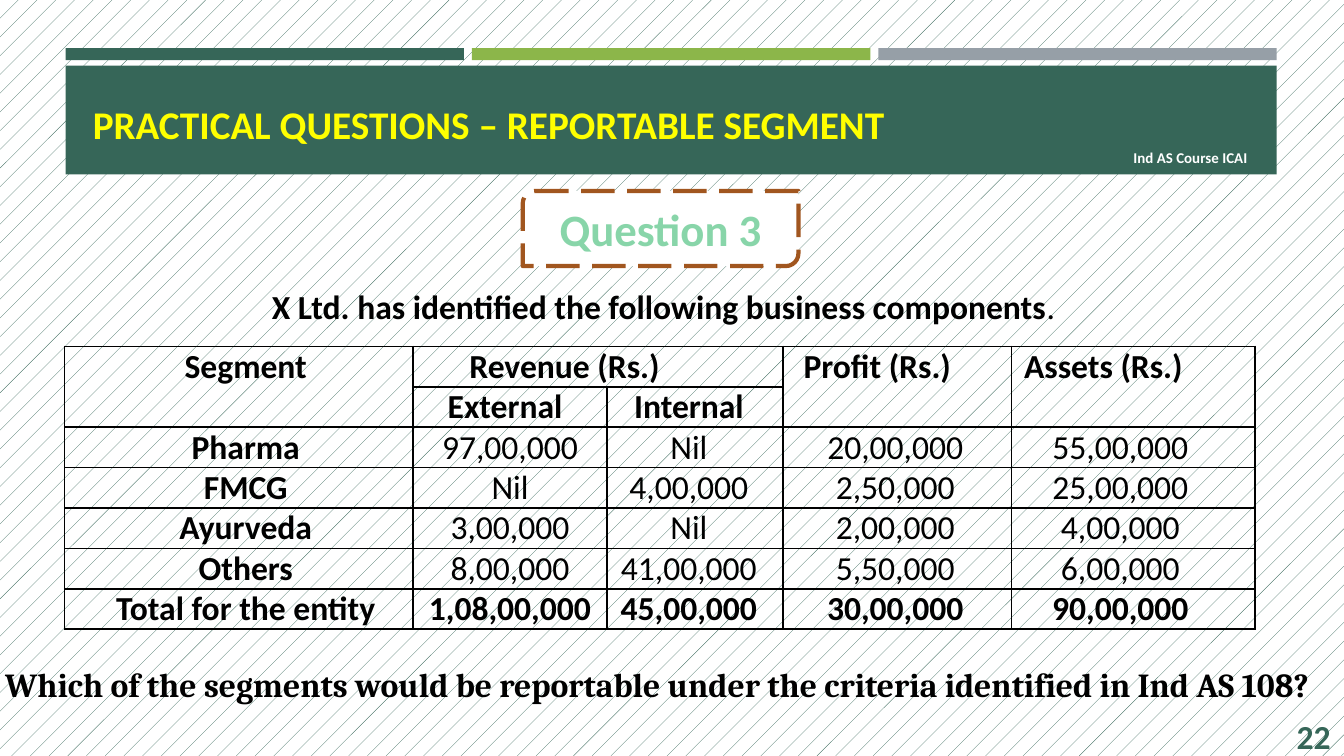
from lxml import etree
from pptx import Presentation
from pptx.dml.color import RGBColor
from pptx.enum.dml import MSO_LINE, MSO_PATTERN
from pptx.enum.shapes import MSO_SHAPE
from pptx.enum.text import MSO_ANCHOR, PP_ALIGN
from pptx.oxml.ns import qn
from pptx.util import Cm, Pt

RECTANGLE = MSO_SHAPE.RECTANGLE
ROUND_DIAGONAL = MSO_SHAPE.ROUND_2_DIAG_RECTANGLE
LONG_DASH = MSO_LINE.LONG_DASH
DOTS = MSO_PATTERN.PERCENT_5
LEFT, CENTER, RIGHT = PP_ALIGN.LEFT, PP_ALIGN.CENTER, PP_ALIGN.RIGHT
TOP, MIDDLE = MSO_ANCHOR.TOP, MSO_ANCHOR.MIDDLE

COLORS = {
    "green": "366658", "lime": "8CB64A", "gray": "969FA7", "white": "FFFFFF",
    "black": "000000", "yellow": "FFFF00", "mint": "88D5A9", "brown": "A1561F",
}

HEADINGS = [
    ["Segment", "Revenue (Rs.)", "", "Profit (Rs.)", "Assets (Rs.)"],
    ["", "External", "Internal", "", ""],
]
SEGMENTS = [
    ["Pharma", "97,00,000", "Nil", "20,00,000", "55,00,000"],
    ["FMCG", "Nil", "4,00,000", "2,50,000", "25,00,000"],
    ["Ayurveda", "3,00,000", "Nil", "2,00,000", "4,00,000"],
    ["Others", "8,00,000", "41,00,000", "5,50,000", "6,00,000"],
    ["Total for the entity", "1,08,00,000", "45,00,000", "30,00,000", "90,00,000"],
]
MERGES = [((0, 0), (1, 0)), ((0, 1), (0, 2)), ((0, 3), (1, 3)), ((0, 4), (1, 4))]
COLUMN_WIDTHS = [6.59, 3.66, 3.33, 4.32, 4.6]
RIGHT_MARGINS = [0, 0, 0.23, 0.08, 0.49]
HEADING_MARGINS = {(0, 1): 1.27, (0, 3): 0.76, (0, 4): 1.13, (1, 1): 0.19}


def color(name):
    return RGBColor.from_string(COLORS[name])


class SlideBuilder:
    def __init__(self, presentation):
        self.slide = presentation.slides.add_slide(presentation.slide_layouts[5])
        self.text_format = {"name": "Calibri", "size": Pt(18), "bold": True}

    def background(self):
        fill = self.slide.background.fill
        fill.patterned()
        fill.pattern = DOTS
        fill.fore_color.rgb = color("green")
        fill.back_color.rgb = color("white")

    def add_runs(self, paragraph, runs, ink="black", align=CENTER, **changes):
        paragraph.alignment = align
        for text, overrides in runs:
            run = paragraph.add_run()
            run.text = text
            for key, value in {**self.text_format, **changes, **overrides}.items():
                setattr(run.font, key, value)
            run.font.color.rgb = color(ink)

    def fill_frame(self, frame, runs, anchor=MIDDLE, **options):
        frame.word_wrap = True
        frame.vertical_anchor = anchor
        self.add_runs(frame.paragraphs[0], runs, **options)

    def title(self, text, box):
        shape = self.slide.shapes.title
        for key, value in zip(("left", "top", "width", "height"), box):
            setattr(shape, key, Cm(value))
        self.fill_frame(shape.text_frame, [(text, {})],
                        ink="yellow", align=LEFT, size=Pt(21))

    def text(self, runs, box, **options):
        shape = self.slide.shapes.add_textbox(*map(Cm, box))
        self.fill_frame(shape.text_frame, runs, **options)

    def block(self, box, fill, kind=RECTANGLE):
        shape = self.slide.shapes.add_shape(kind, *map(Cm, box))
        shape.shadow.inherit = False
        shape.fill.solid()
        shape.fill.fore_color.rgb = color(fill)
        shape.line.fill.background()
        return shape

    def badge(self, text, box):
        shape = self.block(box, "white", ROUND_DIAGONAL)
        shape.line.color.rgb = color("brown")
        shape.line.width = Pt(2.25)
        shape.line.dash_style = LONG_DASH
        self.fill_frame(shape.text_frame, [(text, {})], ink="mint", size=Pt(24))

    def borders(self, cell):
        properties = cell._tc.get_or_add_tcPr()
        for side in ("lnL", "lnR", "lnT", "lnB"):
            line = etree.SubElement(properties, qn(f"a:{side}"), w=str(Pt(1)))
            fill = etree.SubElement(line, qn("a:solidFill"))
            etree.SubElement(fill, qn("a:srgbClr"), val=COLORS["black"])

    def table(self, left, top, row_height):
        rows = HEADINGS + SEGMENTS
        frame = self.slide.shapes.add_table(
            len(rows), len(COLUMN_WIDTHS), Cm(left), Cm(top),
            Cm(sum(COLUMN_WIDTHS)), Cm(row_height * len(rows)))
        table = frame.table
        table.first_row = table.horz_banding = False
        for column, width in zip(table.columns, COLUMN_WIDTHS):
            column.width = Cm(width)
        for start, end in MERGES:
            table.cell(*start).merge(table.cell(*end))
        for row_index, values in enumerate(rows):
            table.rows[row_index].height = Cm(row_height)
            for column_index, value in enumerate(values):
                cell = table.cell(row_index, column_index)
                self.borders(cell)
                cell.fill.background()
                position = (row_index, column_index)
                margins = {
                    "margin_left": 0 if column_index else 0.26,
                    "margin_right": HEADING_MARGINS.get(position, RIGHT_MARGINS[column_index]),
                    "margin_top": 0,
                    "margin_bottom": 0,
                }
                for key, margin in margins.items():
                    setattr(cell, key, Cm(margin))
                cell.vertical_anchor = TOP if row_index == 0 else MIDDLE
                if value:
                    bold = column_index == 0 or row_index in (0, 1, len(rows) - 1)
                    self.add_runs(cell.text_frame.paragraphs[0], [(value, {"bold": bold})])


def main():
    presentation = Presentation()
    presentation.slide_width = Cm(25.4)
    presentation.slide_height = Cm(14.29)
    builder = SlideBuilder(presentation)
    builder.background()

    for index, fill in enumerate(("green", "lime", "gray")):
        builder.block((1.24 + index * 7.68, 0.91, 7.53, 0.23), fill)
    banner = builder.block((1.24, 1.24, 22.89, 2.06), "green")
    builder.slide.shapes._spTree.insert(2, banner._element)
    builder.title("PRACTICAL QUESTIONS – REPORTABLE SEGMENT", (1.5, 1.4, 20.4, 1.9))
    builder.text([("Ind AS Course ICAI", {})], (21, 2.84, 3, 0.28),
                 ink="white", size=Pt(8))
    builder.badge("Question 3", (9.88, 3.61, 5.21, 1.42))
    builder.text([("X Ltd. has identified the following business components", {}),
                  (".", {"bold": False})], (0.46, 5.28, 24.16, 1.02), anchor=TOP)
    builder.table(1.22, 6.55, 0.76)
    builder.text([("Which of the segments would be reportable under the criteria "
                   "identified in Ind AS 108?", {})], (-0.15, 12.42, 25.96, 1.02),
                 align=LEFT, anchor=TOP, name="Cambria")
    builder.text([("22", {})], (23.27, 13.54, 2.13, 0.76), ink="green", align=RIGHT)
    presentation.save("out.pptx")


if __name__ == "__main__":
    main()
